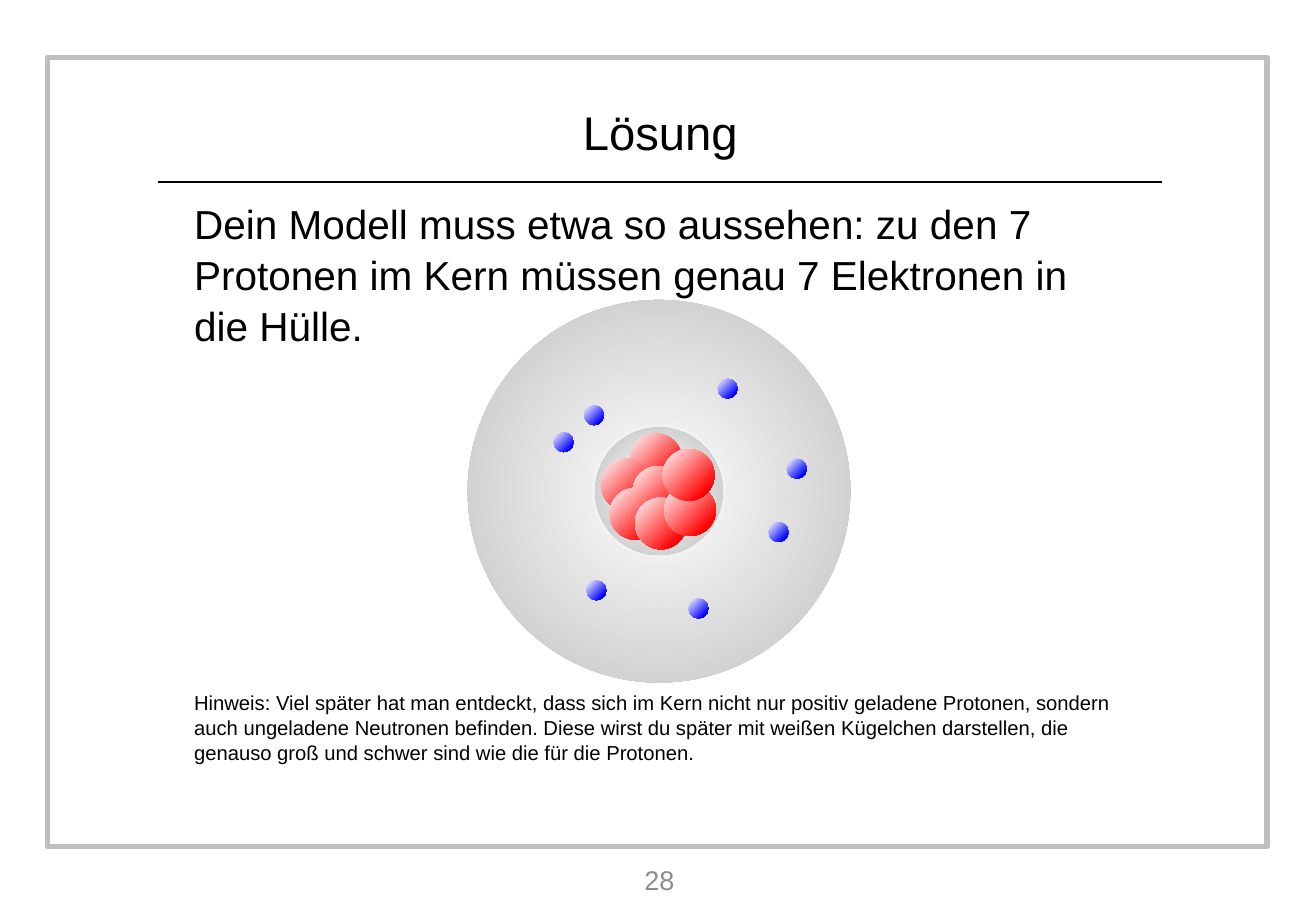
from typing import NamedTuple

from pptx import Presentation
from pptx.dml.color import RGBColor
from pptx.enum.shapes import MSO_CONNECTOR, MSO_SHAPE
from pptx.enum.text import MSO_ANCHOR, PP_ALIGN
from pptx.oxml import parse_xml
from pptx.oxml.ns import nsdecls, qn
from pptx.shapes.autoshape import Shape
from pptx.slide import Slide
from pptx.util import Pt

OVAL, RECTANGLE = MSO_SHAPE.OVAL, MSO_SHAPE.RECTANGLE
STRAIGHT = MSO_CONNECTOR.STRAIGHT
CENTER, LEFT = PP_ALIGN.CENTER, PP_ALIGN.LEFT
MIDDLE, TOP = MSO_ANCHOR.MIDDLE, MSO_ANCHOR.TOP

BLACK = RGBColor(0x00, 0x00, 0x00)
WHITE = RGBColor(0xFF, 0xFF, 0xFF)
GRAY = RGBColor(0xBF, 0xBF, 0xBF)
NUMBER_GRAY = RGBColor(0x8C, 0x8C, 0x8C)
BLUE = RGBColor(0x00, 0x00, 0xFF)
RED = RGBColor(0xFF, 0x00, 0x00)
FONT = "Arial"


class Box(NamedTuple):
    left: float
    top: float
    width: float
    height: float


class TextLine(NamedTuple):
    text: str
    size: float
    space_before: float = 0


class Gradient(NamedTuple):
    inner: RGBColor
    outer: RGBColor
    start: float  # position of the inner colour
    focus: tuple[int, int, int, int]  # left, top, right, bottom in percent


class Ball(NamedTuple):
    diameter: float
    gradient: Gradient
    centers: list[tuple[float, float]]


SPHERE = Gradient(WHITE, GRAY, 0, (50, 50, 50, 50))
ATOM_CENTER = (390.6, 291.2)

# Back to front
BALLS = [
    Ball(226.8, SPHERE, [ATOM_CENTER]),  # shell
    Ball(11.8, Gradient(BLUE, WHITE, 0.17, (100, 100, 0, 0)), [  # electrons
        (352.1, 246.2), (461.5, 315.4), (414, 360.7), (334.1, 262.1),
        (353.5, 349.9), (472.3, 277.9), (431.3, 230.4),
    ]),
    Ball(75.6, SPHERE, [ATOM_CENTER]),  # nucleus
    Ball(30.6, Gradient(RED, WHITE, 0.17, (100, 100, 0, 0)), [  # protons
        (388.8, 272.2), (371.5, 287.3), (390.2, 291.6), (376.6, 304.6),
        (391.7, 310.3), (409, 302.4), (408.2, 281.5),
    ]),
]

TASK = TextLine(
    "Dein Modell muss etwa so aussehen: zu den 7 Protonen im Kern müssen "
    "genau 7 Elektronen in die Hülle.", 24)
HINT = TextLine(
    "Hinweis: Viel später hat man entdeckt, dass sich im Kern nicht nur positiv "
    "geladene Protonen, sondern auch ungeladene Neutronen befinden. Diese wirst "
    "du später mit weißen Kügelchen darstellen, die genauso groß und schwer sind "
    "wie die für die Protonen.", 12, 201)


def add_plain_shape(slide: Slide, kind: MSO_SHAPE, box: Box) -> Shape:
    shape = slide.shapes.add_shape(kind, *(Pt(length) for length in box))
    shape.shadow.inherit = False
    return shape


def add_frame(slide: Slide) -> None:
    frame = add_plain_shape(slide, RECTANGLE, Box(28, 34, 723, 468))
    frame.fill.background()
    frame.line.color.rgb = GRAY
    frame.line.width = Pt(3)


def add_title_rule(slide: Slide) -> None:
    rule = slide.shapes.add_connector(STRAIGHT, Pt(93.6), Pt(108), Pt(689), Pt(108))
    rule.line.color.rgb = BLACK
    rule.line.width = Pt(1.5)
    rule._element.spPr.append(parse_xml(f"<a:effectLst {nsdecls('a')}/>"))


def add_text(slide: Slide, box: Box, lines: list[TextLine], color: RGBColor = BLACK,
             alignment: PP_ALIGN = CENTER, anchor: MSO_ANCHOR = MIDDLE,
             line_spacing: float = 1.0, wrap: bool = True) -> None:
    text_box = slide.shapes.add_textbox(*(Pt(length) for length in box))
    text_frame = text_box.text_frame
    text_frame.word_wrap = wrap
    text_frame.vertical_anchor = anchor
    for index, line in enumerate(lines):
        paragraph = text_frame.add_paragraph() if index else text_frame.paragraphs[0]
        paragraph.text = line.text
        paragraph.alignment = alignment
        paragraph.line_spacing = line_spacing
        paragraph.space_before = Pt(line.space_before)
        paragraph.font.name = FONT
        paragraph.font.size = Pt(line.size)
        paragraph.font.color.rgb = color


def fill_radially(shape: Shape, gradient: Gradient) -> None:
    shape.fill.gradient()
    inner, outer = shape.fill.gradient_stops
    inner.color.rgb, inner.position = gradient.inner, gradient.start
    outer.color.rgb, outer.position = gradient.outer, 1
    left, top, right, bottom = (percent * 1000 for percent in gradient.focus)
    linear = shape._element.spPr.find(qn("a:gradFill")).find(qn("a:lin"))
    linear.getparent().replace(linear, parse_xml(
        f'<a:path {nsdecls("a")} path="circle">'
        f'<a:fillToRect l="{left}" t="{top}" r="{right}" b="{bottom}"/></a:path>'))


def add_balls(slide: Slide, ball: Ball) -> None:
    size = ball.diameter
    for x, y in ball.centers:
        shape = add_plain_shape(slide, OVAL, Box(x - size / 2, y - size / 2, size, size))
        fill_radially(shape, ball.gradient)
        shape.line.fill.background()


def main() -> None:
    presentation = Presentation()
    presentation.slide_width, presentation.slide_height = Pt(780), Pt(540)
    slide = presentation.slides.add_slide(presentation.slide_layouts[6])

    # Frame and title
    add_frame(slide)
    add_title_rule(slide)
    add_text(slide, Box(337.7, 57, 107.3, 42.5), [TextLine("Lösung", 28)], wrap=False)

    # Solution, hint and slide number
    add_text(slide, Box(108, 113, 566.6, 340), [TASK, HINT],
             alignment=LEFT, anchor=TOP, line_spacing=1.05)
    add_text(slide, Box(303, 507.6, 175.7, 28), [TextLine("28", 16)], NUMBER_GRAY)

    # Atom model
    for ball in BALLS:
        add_balls(slide, ball)

    presentation.save("out.pptx")


if __name__ == "__main__":
    main()
